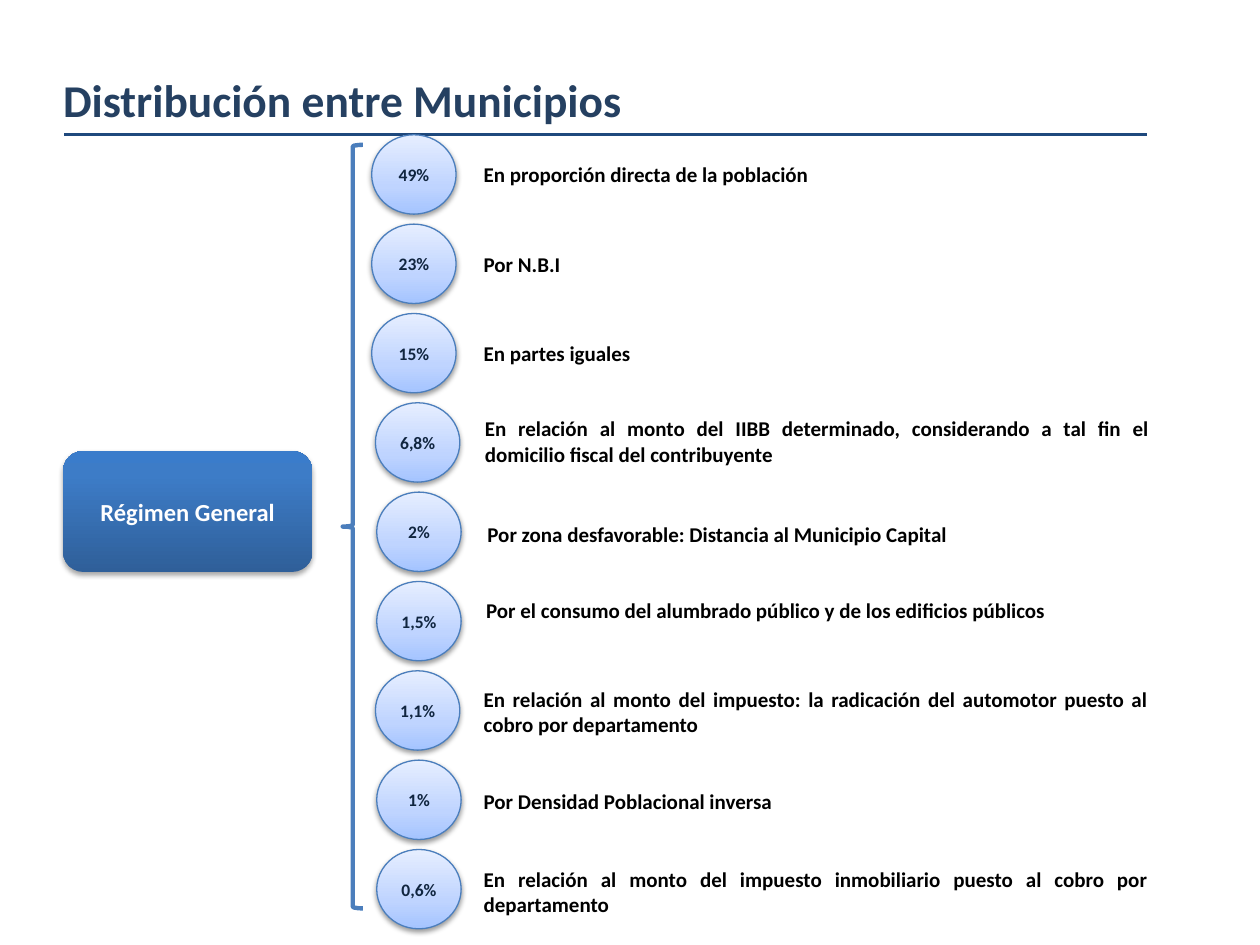
"""Build the slide on how funds are shared among municipalities."""
from dataclasses import dataclass

from lxml.etree import SubElement
from pptx import Presentation
from pptx.dml.color import RGBColor
from pptx.enum.shapes import MSO_CONNECTOR, MSO_SHAPE
from pptx.enum.text import MSO_ANCHOR, MSO_AUTO_SIZE, PP_ALIGN
from pptx.oxml.ns import qn
from pptx.util import Inches, Pt


@dataclass(frozen=True)
class Theme:
    font: str = "Calibri"
    title: str = "254061"
    rule: str = "1F497D"
    outline: str = "4B7EBC"
    text: str = "000000"
    light: str = "FFFFFF"
    share: str = "10253F"
    box_stops: tuple = ((0, "2F5F99"), (80, "3D7CC7"), (100, "3A7CCB"))
    share_stops: tuple = ((0, "A4C4FF"), (35, "BFD4FF"), (100, "E6EEFF"))
    title_size: int = 26
    box_size: int = 14
    text_size: int = 12
    share_size: int = 10


THEME = Theme()
COLUMNS, ROWS = 100, 75
FIRST_ROW, ROW_STEP = 10.7, 7.09
CIRCLE_WIDTH, CIRCLE_HEIGHT = 6.7, 6.3
ONE_LINE, TWO_LINES = 3, 5
WIDE, NARROW = 54.7, 52.8

CRITERIA = [
    ("49%", 29.5, "En proporción directa de la población", 37.4, WIDE, ONE_LINE, 0),
    ("23%", 29.5, "Por N.B.I", 37.4, WIDE, ONE_LINE, 0),
    ("15%", 29.5, "En partes iguales", 37.4, WIDE, ONE_LINE, 0),
    ("6,8%", 29.8, "En relación al monto del IIBB determinado, considerando a tal fin "
     "el domicilio fiscal del contribuyente", 37.5, WIDE, TWO_LINES, -0.1),
    ("2%", 29.9, "Por zona desfavorable: Distancia al Municipio Capital",
     37.7, NARROW, ONE_LINE, 0.2),
    ("1,5%", 29.9, "Por el consumo del alumbrado público y de los edificios públicos",
     37.6, NARROW, ONE_LINE, -0.9),
    ("1,1%", 29.8, "En relación al monto del impuesto: la radicación del automotor "
     "puesto al cobro por departamento", 37.4, WIDE, TWO_LINES, 0.1),
    ("1%", 29.9, "Por Densidad Poblacional inversa", 37.4, WIDE, ONE_LINE, 0.1),
    ("0,6%", 29.9, "En relación al monto del impuesto inmobiliario puesto al cobro por "
     "departamento", 37.4, WIDE, TWO_LINES, 0.2),
]


def write(frame, text, size, color, align=PP_ALIGN.LEFT, anchor=MSO_ANCHOR.TOP, insets=(0.1, 0.05)):
    """Put one bold paragraph in a text frame."""
    frame.word_wrap = True
    frame.vertical_anchor = anchor
    frame.margin_left = frame.margin_right = Inches(insets[0])
    frame.margin_top = frame.margin_bottom = Inches(insets[1])
    para = frame.paragraphs[0]
    para.alignment = align
    span = para.add_run()
    span.text = text
    span.font.name = THEME.font
    span.font.size = Pt(size)
    span.font.bold = True
    span.font.color.rgb = RGBColor.from_string(color)


def add_color(parent, color):
    """Add a colour element and return it."""
    return SubElement(parent, qn("a:srgbClr"), val=color)


class Canvas:
    """Draw styled elements on a slide, placed by columns and rows."""

    def __init__(self, deck):
        self.column = deck.slide_width / COLUMNS
        self.row = deck.slide_height / ROWS
        self.page = deck.slides.add_slide(deck.slide_layouts[5])

    def place(self, left, top, width, height):
        """Turn grid units into lengths."""
        return (round(left * self.column), round(top * self.row),
                round(width * self.column), round(height * self.row))

    def title(self, text, *area):
        """Fill and move the title placeholder."""
        box = self.page.shapes.title
        box.left, box.top, box.width, box.height = self.place(*area)
        write(box.text_frame, text, THEME.title_size, THEME.title)
        box.text_frame.auto_size = MSO_AUTO_SIZE.SHAPE_TO_FIT_TEXT

    def rule(self, left, right, row):
        """Draw a level line."""
        start, level, end, _ = self.place(left, row, right, 0)
        line = self.page.shapes.add_connector(MSO_CONNECTOR.STRAIGHT, start, level, end, level)
        line.line.color.rgb = RGBColor.from_string(THEME.rule)
        line.line.width = Pt(1.5)
        SubElement(line._element.spPr, qn("a:effectLst"))

    def label(self, text, *area):
        """Add a justified text box."""
        box = self.page.shapes.add_textbox(*self.place(*area))
        write(box.text_frame, text, THEME.text_size, THEME.text, align=PP_ALIGN.JUSTIFY)
        box.text_frame.auto_size = MSO_AUTO_SIZE.SHAPE_TO_FIT_TEXT

    def shape(self, kind, area, line_width=0):
        """Add a preset shape with an optional outline and no shadow."""
        shape = self.page.shapes.add_shape(kind, *self.place(*area))
        shape.shadow.inherit = False
        if line_width:
            shape.line.color.rgb = RGBColor.from_string(THEME.outline)
            shape.line.width = Pt(line_width)
        else:
            shape.line.fill.background()
        return shape

    def shade(self, shape, stops, distance, opacity):
        """Give a shape an upward gradient and a soft shadow below."""
        shape.fill.gradient()
        shape.fill.gradient_angle = 90
        stop_list = next(shape._element.iter(qn("a:gsLst")))
        stop_list.clear()
        for position, color in stops:
            add_color(SubElement(stop_list, qn("a:gs"), pos=str(position * 1000)), color)
        effects = next(shape._element.iter(qn("a:effectLst")))
        shadow = SubElement(effects, qn("a:outerShdw"), blurRad=str(Pt(3.1)),
                            dist=str(Pt(distance)), dir="5400000", rotWithShape="0")
        SubElement(add_color(shadow, "000000"), qn("a:alpha"), val=str(opacity * 1000))

    def heading_box(self, text, *area):
        """Add the rounded box that names the scheme."""
        box = self.shape(MSO_SHAPE.ROUNDED_RECTANGLE, area)
        self.shade(box, THEME.box_stops, distance=1.8, opacity=35)
        write(box.text_frame, text, THEME.box_size, THEME.light,
              align=PP_ALIGN.CENTER, anchor=MSO_ANCHOR.MIDDLE)

    def brace(self, *area):
        """Add the brace that gathers the criteria."""
        self.shape(MSO_SHAPE.LEFT_BRACE, area, line_width=2.5).fill.background()

    def share(self, text, *area):
        """Add a circle holding a percentage."""
        circle = self.shape(MSO_SHAPE.OVAL, area, line_width=0.75)
        self.shade(circle, THEME.share_stops, distance=1.6, opacity=38)
        write(circle.text_frame, text, THEME.share_size, THEME.share,
              align=PP_ALIGN.CENTER, anchor=MSO_ANCHOR.MIDDLE, insets=(0.06, 0.04))


def main():
    """Build and save the deck."""
    deck = Presentation()
    deck.slide_width, deck.slide_height = Inches(10), Inches(7.5)
    canvas = Canvas(deck)
    canvas.rule(5.1, 91, 10.7)
    canvas.title("Distribución entre Municipios", 4, 5.2, 88.2, 5.4)
    canvas.heading_box("Régimen General", 5, 35.8, 19.8, 9.6)
    canvas.brace(27.2, 11.5, 1.6, 60.6)
    for index, (share, left, text, text_left, width, height, shift) in enumerate(CRITERIA):
        top = FIRST_ROW + index * ROW_STEP
        canvas.share(share, left, top, CIRCLE_WIDTH, CIRCLE_HEIGHT)
        text_top = top + (CIRCLE_HEIGHT - height) / 2 + shift
        canvas.label(text, text_left, text_top, width, height)
    deck.save("out.pptx")


if __name__ == "__main__":
    main()
